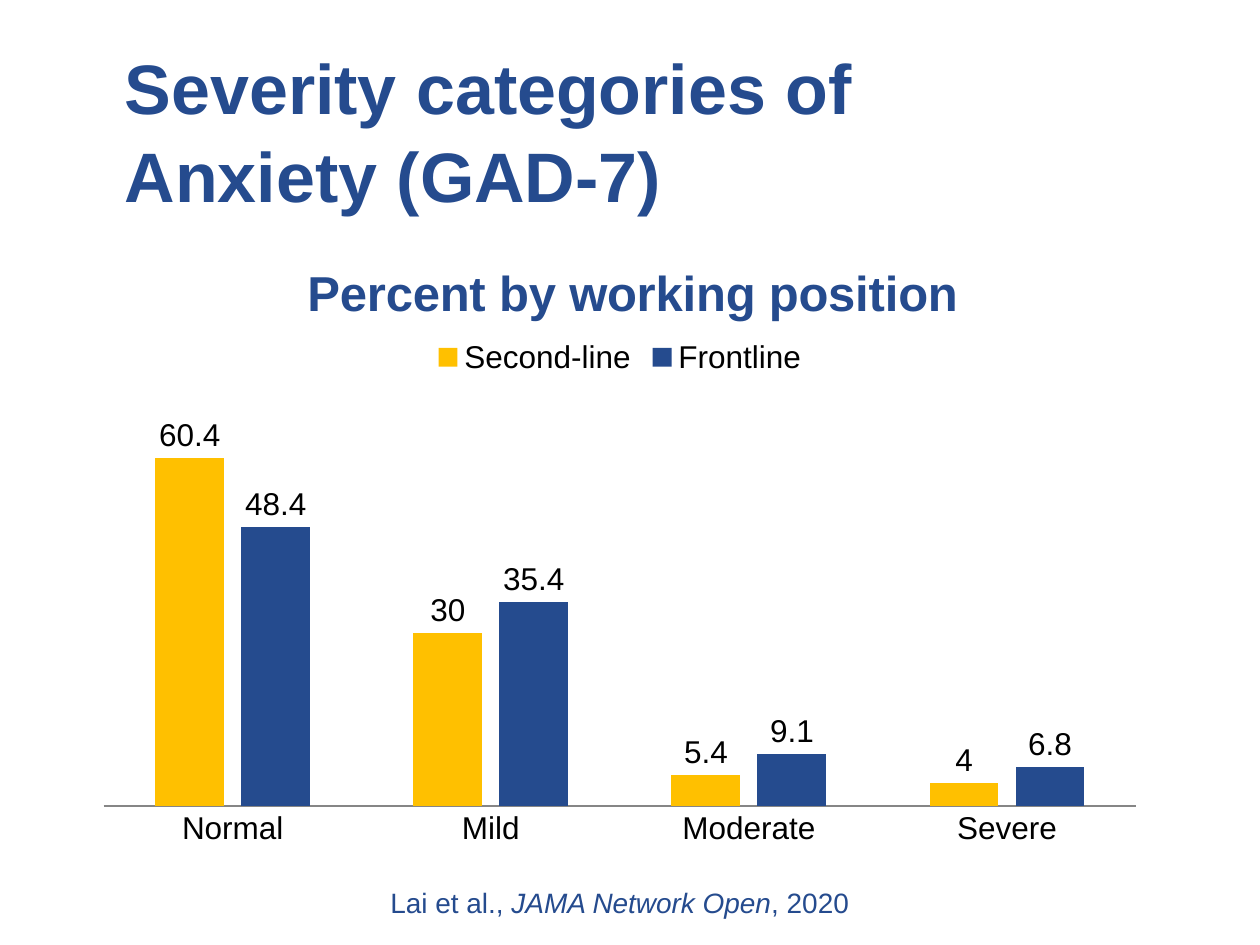
from dataclasses import dataclass

from lxml import etree
from pptx import Presentation
from pptx import util as u
from pptx.chart.data import CategoryChartData
from pptx.dml.color import RGBColor
from pptx.enum import chart as ch, text
from pptx.oxml.ns import qn


@dataclass(frozen=True)
class Theme:
    font: str = "Arial"
    navy: str = "254B8E"
    gold: str = "FFC000"
    black: str = "000000"
    axis: str = "868686"
    title: int = 40
    heading: int = 28
    label: int = 18
    source: int = 16


THEME = Theme()
WIDTH, HEIGHT = 10, 7.5
CATEGORIES = ["Normal", "Mild", "Moderate", "Severe"]
SERIES = [
    ("Second-line", [60.4, 30, 5.4, 4], THEME.gold),
    ("Frontline", [48.4, 35.4, 9.1, 6.8], THEME.navy),
]


def apply(target, values):
    for key, value in values.items():
        setattr(target, key, value)


def style(font, size, color, **extra):
    apply(font, {"name": THEME.font, "size": u.Pt(size), **extra})
    font.color.rgb = RGBColor.from_string(color)


def box(left, top, width, height):
    return [u.Inches(v) for v in (left, top, width, height)]


def place(parent, index, **shares):
    """Fix a chart part at shares of the chart's size."""
    for old in parent.findall(qn("c:layout")):
        parent.remove(old)
    layout = etree.Element(qn("c:layout"))
    manual = etree.SubElement(layout, qn("c:manualLayout"))
    if "target" in shares:
        etree.SubElement(manual, qn("c:layoutTarget"), val=shares.pop("target"))
    for axis in "xy":
        etree.SubElement(manual, qn(f"c:{axis}Mode"), val="edge")
    for key, share in shares.items():
        etree.SubElement(manual, qn(f"c:{key}"), val=str(share))
    parent.insert(index, layout)


def add_heading(slide):
    heading = slide.shapes.title
    apply(heading, dict(zip(("left", "top", "width", "height"), box(0.89, 0.25, 8.86, 1.25))))
    frame = heading.text_frame
    apply(frame, {"vertical_anchor": text.MSO_ANCHOR.TOP, "word_wrap": True,
                  "auto_size": text.MSO_AUTO_SIZE.NONE, "margin_top": u.Inches(0.07)})
    frame.text = "Severity categories of \vAnxiety (GAD-7)"
    line = frame.paragraphs[0]
    apply(line, {"alignment": text.PP_ALIGN.LEFT, "line_spacing": 1.05})
    for run in line.runs:
        style(run.font, THEME.title, THEME.navy, bold=True)


def add_severity_chart(slide):
    data = CategoryChartData()
    data.categories = CATEGORIES
    for name, values, _ in SERIES:
        data.add_series(name, values)
    chart = slide.shapes.add_chart(
        ch.XL_CHART_TYPE.COLUMN_CLUSTERED, *box(0.67, 1.75, 8.5, 5.17), data).chart
    style(chart.font, THEME.label, THEME.black)

    # Chart title and legend
    chart.has_title = chart.has_legend = True
    title_frame = chart.chart_title.text_frame
    title_frame.text = "Percent by working position"
    style(title_frame.paragraphs[0].runs[0].font, THEME.heading, THEME.navy, bold=True)
    apply(chart.legend, {"position": ch.XL_LEGEND_POSITION.TOP, "include_in_layout": False})

    # Axes
    apply(chart.value_axis, {"visible": False, "has_major_gridlines": False,
                             "minimum_scale": 0, "maximum_scale": 100})
    severity = chart.category_axis
    severity.major_tick_mark = ch.XL_TICK_MARK.NONE
    severity.format.line.color.rgb = RGBColor.from_string(THEME.axis)
    severity.format.line.width = u.Pt(0.75)

    # Columns and their values
    plot = chart.plots[0]
    apply(plot, {"gap_width": 150, "overlap": -25, "vary_by_categories": False})
    for series, (_, _, color) in zip(plot.series, SERIES):
        series.format.fill.solid()
        series.format.fill.fore_color.rgb = RGBColor.from_string(color)
        apply(series.data_labels, {"show_value": True, "number_format": "General",
                                   "number_format_is_linked": False,
                                   "position": ch.XL_LABEL_POSITION.OUTSIDE_END})

    # Positions inside the chart
    find = chart.element.xpath
    place(find("c:chart/c:title")[0], 1, x=0.2, y=0.05)
    place(find("c:chart/c:legend")[0], 1, x=0.32, y=0.18, w=0.36, h=0.06)
    place(find("c:chart/c:plotArea")[0], 0, target="inner", x=0.018, y=0.015, w=0.964, h=0.884)


def add_source(slide):
    frame = slide.shapes.add_textbox(*box(0.3 * WIDTH, 0.93 * HEIGHT, 3.92, 0.77)).text_frame
    apply(frame, {"word_wrap": True, "auto_size": text.MSO_AUTO_SIZE.SHAPE_TO_FIT_TEXT})
    for words, italic in (("Lai et al., ", False), ("JAMA Network Open", True), (", 2020", False)):
        run = frame.paragraphs[0].add_run()
        run.text = words
        style(run.font, THEME.source, THEME.navy, italic=italic)


def main():
    deck = Presentation()
    apply(deck, {"slide_width": u.Inches(WIDTH), "slide_height": u.Inches(HEIGHT)})
    slide = deck.slides.add_slide(deck.slide_layouts[5])
    add_heading(slide)
    add_severity_chart(slide)
    add_source(slide)
    deck.save("out.pptx")


if __name__ == "__main__":
    main()
